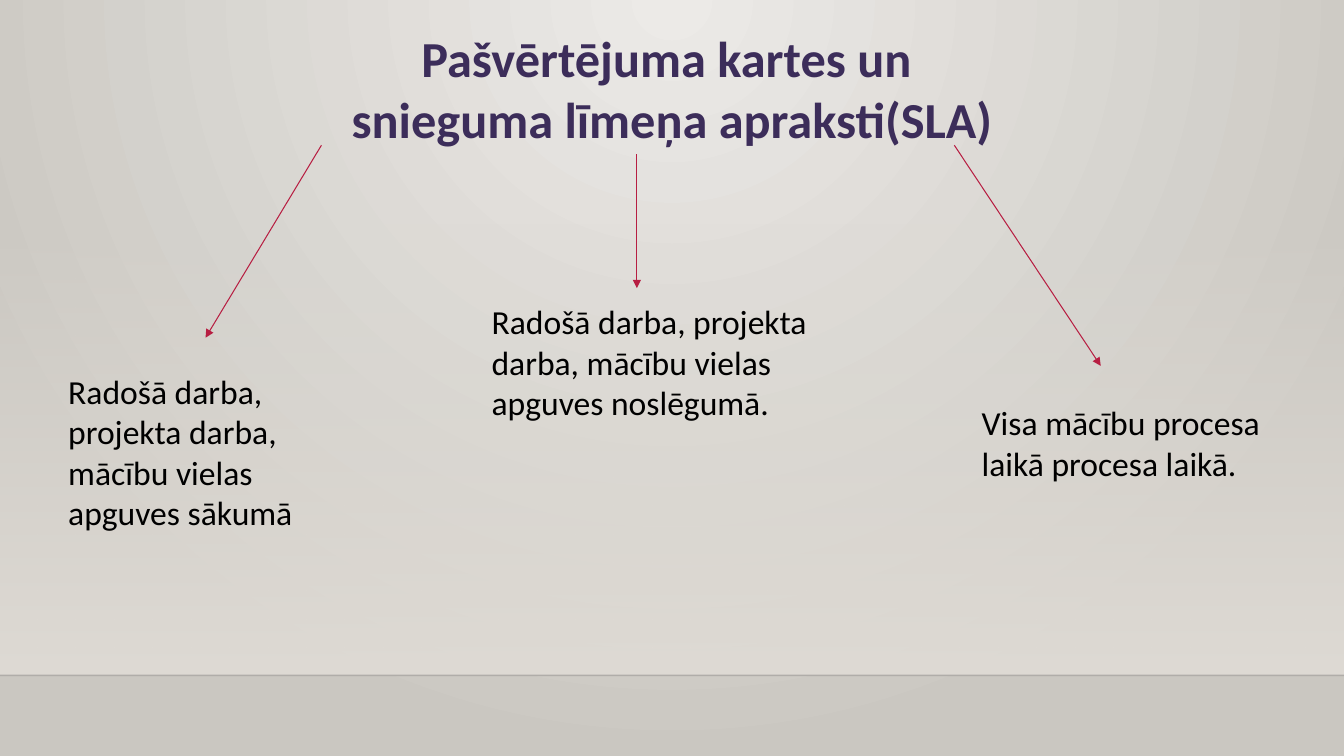
import pptx
import pptx.dml.color
import pptx.enum.shapes
import pptx.enum.text
import pptx.oxml
import pptx.oxml.ns
import pptx.util
from pptx.util import Cm

# Content: lengths in centimetres
SLIDE_WIDTH, SLIDE_HEIGHT = 33.87, 19.05
FLOOR_TOP = 17.02
WALL_TOP = 5.61
FONT = "Calibri"
ACCENT = "B71E42"

TITLE = {
    "lines": ["Pašvērtējuma kartes un ", "snieguma līmeņa apraksti(SLA)"],
    "box": (0.48, 0.56, 32.92, 3.33),
}
# Each branch: text, its box, arrow start, arrow end
BRANCHES = [
    ("Radošā darba, projekta darba, mācību vielas apguves sākumā",
     (1.47, 9.22, 6.83, 4.37), (8.1, 3.66), (5.18, 8.51)),
    ("Radošā darba, projekta darba, mācību vielas apguves noslēgumā.",
     (12.14, 7.47, 8.46, 4.11), (16.05, 3.89), (16.05, 7.26)),
    ("Visa mācību procesa laikā procesa laikā.",
     (24.49, 10.01, 7.9, 2.31), (24.05, 3.66), (27.74, 9.22)),
]


def color(hex_code):
    return pptx.dml.color.RGBColor.from_string(hex_code)


def lengths(values):
    return [Cm(value) for value in values]


def make_element(tag, **attributes):
    element = pptx.oxml.parse_xml(f"<{tag} {pptx.oxml.ns.nsdecls('a')}/>")
    for name, value in attributes.items():
        element.set(name, str(value))
    return element


def find(parent, tag):
    return parent.find(".//" + pptx.oxml.ns.qn(tag))


def set_gradient(fill, first, last):
    fill.gradient()
    for stop, hex_code, position in zip(fill.gradient_stops, (first, last), (0, 1)):
        stop.color.rgb = color(hex_code)
        stop.position = position


def set_opacity(parent, percent):
    find(parent, "a:srgbClr").append(make_element("a:alpha", val=percent * 1000))


def add_text(slide, lines, box, size, hex_code, bold=False, alignment=None):
    frame = slide.shapes.add_textbox(*lengths(box)).text_frame
    frame.word_wrap = True
    frame.auto_size = pptx.enum.text.MSO_AUTO_SIZE.SHAPE_TO_FIT_TEXT
    frame.text = "\n".join(lines)
    for paragraph in frame.paragraphs:
        paragraph.alignment = alignment
        for run in paragraph.runs:
            run.font.name = FONT
            run.font.size = pptx.util.Pt(size)
            run.font.bold = bold
            run.font.color.rgb = color(hex_code)


def add_line(slide, start, end, hex_code, width):
    connector = slide.shapes.add_connector(
        pptx.enum.shapes.MSO_CONNECTOR.STRAIGHT, *lengths(start + end))
    connector.line.color.rgb = color(hex_code)
    connector.line.width = pptx.util.Pt(width)
    find(connector.element, "p:spPr").append(make_element("a:effectLst"))
    return connector


def add_backdrop(slide):
    # Radial glow from the top centre
    set_gradient(slide.background.fill, "ECEAE7", "CAC7C1")
    gradient = find(slide.element, "a:gradFill")
    glow = make_element("a:path", path="circle")
    glow.append(make_element("a:fillToRect", l=43000, t=0, r=43000, b=100000))
    gradient.replace(find(gradient, "a:lin"), glow)

    # Wall fading in downwards
    wall = slide.shapes.add_shape(
        pptx.enum.shapes.MSO_SHAPE.RECTANGLE,
        *lengths((0, WALL_TOP, SLIDE_WIDTH, FLOOR_TOP - WALL_TOP)))
    wall.shadow.inherit = False
    wall.line.fill.background()
    set_gradient(wall.fill, "DFDBD5", "DFDBD5")
    wall.fill.gradient_angle = 270
    set_opacity(wall.element, 0)

    # Floor edge
    edge = add_line(slide, (0, FLOOR_TOP), (SLIDE_WIDTH, FLOOR_TOP), "000001", 1)
    set_opacity(edge.element, 20)


def main():
    presentation = pptx.Presentation()
    presentation.slide_width = Cm(SLIDE_WIDTH)
    presentation.slide_height = Cm(SLIDE_HEIGHT)
    slide = presentation.slides.add_slide(presentation.slide_layouts[6])
    add_backdrop(slide)

    # Title
    add_text(slide, TITLE["lines"], TITLE["box"], 36, "3C2D5A", bold=True,
             alignment=pptx.enum.text.PP_ALIGN.CENTER)

    # Branches with arrows
    for text, box, start, end in BRANCHES:
        arrow = add_line(slide, start, end, ACCENT, 0.75)
        find(arrow.element, "a:ln").append(make_element("a:tailEnd", type="triangle"))
        add_text(slide, [text], box, 24, "000000")

    presentation.save("out.pptx")


if __name__ == "__main__":
    main()
